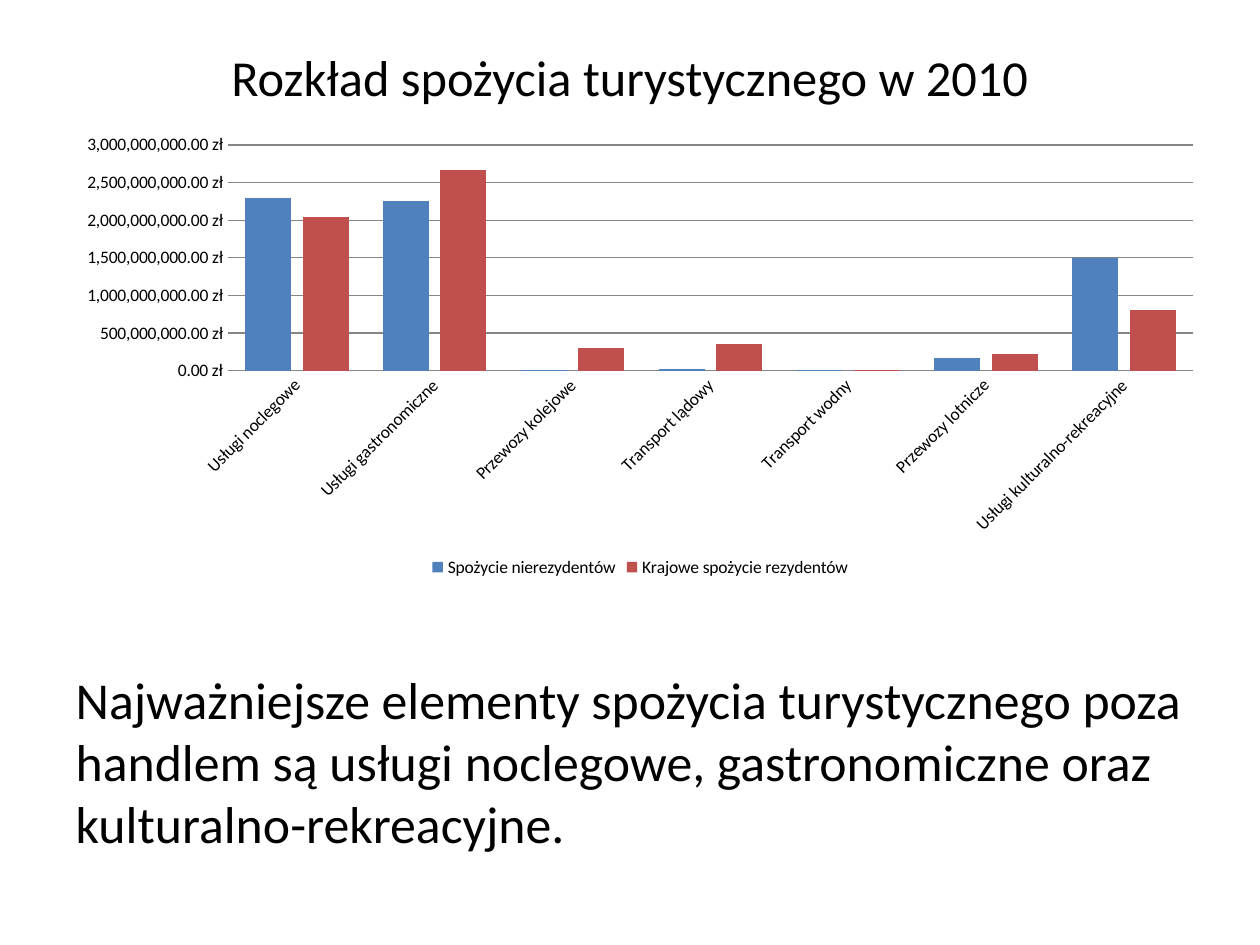
from dataclasses import dataclass

from lxml import etree
from pptx import Presentation
from pptx.chart.data import CategoryChartData
from pptx.dml.color import RGBColor
from pptx.enum.chart import XL_CHART_TYPE, XL_LEGEND_POSITION, XL_TICK_MARK
from pptx.enum.text import MSO_ANCHOR, MSO_AUTO_SIZE, PP_ALIGN
from pptx.oxml.ns import qn
from pptx.util import Inches, Pt

CLUSTERED = XL_CHART_TYPE.COLUMN_CLUSTERED
LEGEND_BOTTOM = XL_LEGEND_POSITION.BOTTOM
NO_TICK = XL_TICK_MARK.NONE
LEFT, CENTER = PP_ALIGN.LEFT, PP_ALIGN.CENTER
TOP, MIDDLE = MSO_ANCHOR.TOP, MSO_ANCHOR.MIDDLE
NO_AUTOFIT = MSO_AUTO_SIZE.NONE

FONT = "Calibri"
COLORS = {
    "text": "000000",
    "background": "FFFFFF",
    "line": "868686",
    "nonresidents": "4F81BD",
    "residents": "C0504D",
}
MILLION = 1_000_000
LABEL_ROTATION = -45 * 60000
CATEGORIES = (
    "Usługi noclegowe",
    "Usługi gastronomiczne",
    "Przewozy kolejowe",
    "Transport lądowy",
    "Transport wodny",
    "Przewozy lotnicze",
    "Usługi kulturalno-rekreacyjne",
)


@dataclass(frozen=True)
class Box:
    left: float
    top: float
    width: float
    height: float

    def lengths(self) -> tuple:
        return tuple(Inches(v) for v in (self.left, self.top, self.width, self.height))


@dataclass(frozen=True)
class Spending:
    name: str
    millions: tuple
    color: str


SPENDING = (
    Spending("Spożycie nierezydentów", (2300, 2260, 10, 20, 10, 170, 1500), "nonresidents"),
    Spending("Krajowe spożycie rezydentów", (2040, 2660, 300, 360, 10, 220, 800), "residents"),
)


def color(name: str) -> RGBColor:
    return RGBColor.from_string(COLORS[name])


def style_font(font, size: float) -> None:
    font.name = FONT
    font.size = Pt(size)
    font.color.rgb = color("text")


def fill_placeholder(shape, box: Box, text: str, size: float, alignment, anchor) -> None:
    shape.left, shape.top, shape.width, shape.height = box.lengths()
    frame = shape.text_frame
    frame.text = text
    frame.word_wrap = True
    frame.auto_size = NO_AUTOFIT
    frame.vertical_anchor = anchor
    paragraph = frame.paragraphs[0]
    paragraph.alignment = alignment
    style_font(paragraph.runs[0].font, size)


def remove_bullet(paragraph) -> None:
    properties = paragraph._p.get_or_add_pPr()
    properties.set("marL", "0")
    properties.set("indent", "0")
    etree.SubElement(properties, qn("a:buNone"))


def add_spending_chart(slide, box: Box) -> None:
    data = CategoryChartData()
    data.categories = CATEGORIES
    for spending in SPENDING:
        data.add_series(spending.name, [value * MILLION for value in spending.millions])
    chart = slide.shapes.add_chart(CLUSTERED, *box.lengths(), data).chart
    style_font(chart.font, 10)
    chart.has_title = False
    chart.has_legend = True
    chart.legend.position = LEGEND_BOTTOM
    chart.legend.include_in_layout = False

    plot = chart.plots[0]
    plot.gap_width = 75
    plot.overlap = -25
    plot.vary_by_categories = False
    for series, spending in zip(plot.series, SPENDING):
        series.format.fill.solid()
        series.format.fill.fore_color.rgb = color(spending.color)

    for axis in (chart.category_axis, chart.value_axis):
        axis.major_tick_mark = NO_TICK
        axis.minor_tick_mark = NO_TICK
        style_font(axis.tick_labels.font, 10)

    category_axis = chart.category_axis
    category_axis.format.line.color.rgb = color("line")
    category_axis.format.line.width = Pt(0.75)
    label_body = category_axis._element.find(qn("c:txPr")).find(qn("a:bodyPr"))
    label_body.set("rot", str(LABEL_ROTATION))
    label_body.set("vert", "horz")

    value_axis = chart.value_axis
    value_axis.minimum_scale = 0
    value_axis.maximum_scale = 3000 * MILLION
    value_axis.major_unit = 500 * MILLION
    value_axis.format.line.fill.background()
    value_axis.has_major_gridlines = True
    gridline = value_axis.major_gridlines.format.line
    gridline.color.rgb = color("line")
    gridline.width = Pt(0.75)
    value_axis.tick_labels.number_format = '#,##0.00\\ "zł"'
    value_axis.tick_labels.number_format_is_linked = False


def main() -> None:
    presentation = Presentation()
    presentation.slide_width = Inches(10)
    presentation.slide_height = Inches(7.5)
    slide = presentation.slides.add_slide(presentation.slide_layouts[1])
    slide.background.fill.solid()
    slide.background.fill.fore_color.rgb = color("background")

    fill_placeholder(
        slide.shapes.title, Box(0.5, 0.3, 9, 0.61),
        "Rozkład spożycia turystycznego w 2010", 28.8, CENTER, MIDDLE,
    )
    body = slide.placeholders[1]
    fill_placeholder(
        body, Box(0.5, 5.25, 9.15, 1.45),
        "Najważniejsze elementy spożycia turystycznego poza handlem są usługi "
        "noclegowe, gastronomiczne oraz kulturalno-rekreacyjne.",
        29.6, LEFT, TOP,
    )
    remove_bullet(body.text_frame.paragraphs[0])
    add_spending_chart(slide, Box(0.51, 1, 9.14, 3.62))
    presentation.save("out.pptx")


if __name__ == "__main__":
    main()
